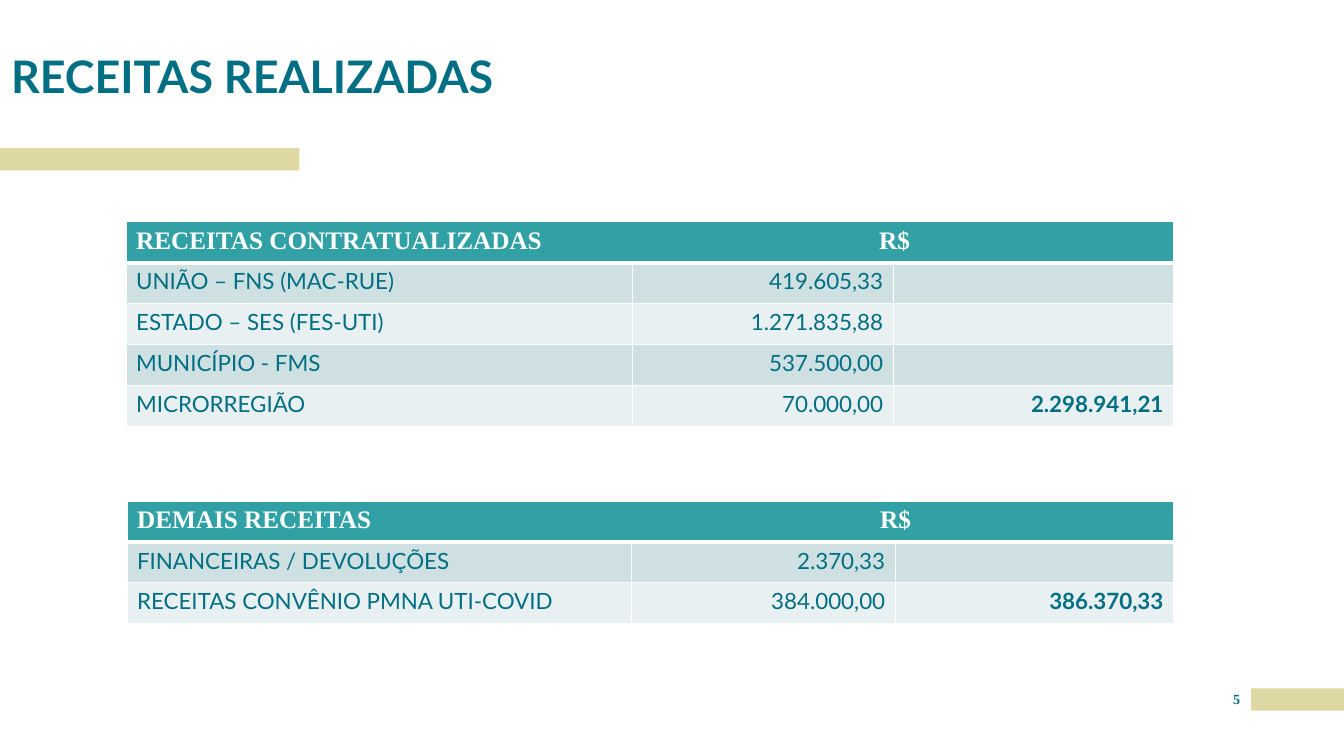
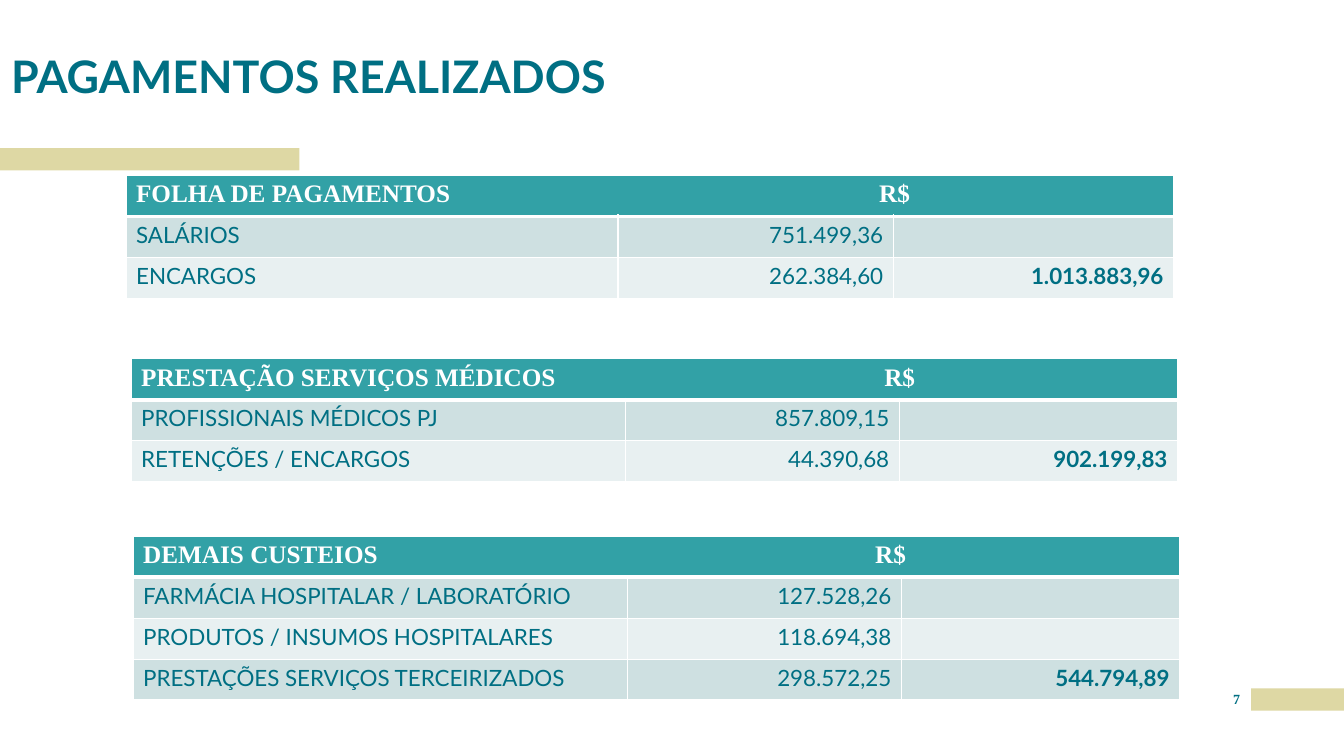
from dataclasses import dataclass

from lxml import etree
from pptx import Presentation
from pptx import util as u
from pptx.dml.color import RGBColor
from pptx.enum import shapes, text
from pptx.oxml.ns import qn

# Shared look
TEAL, HEADER, SAND, WHITE = "006F83", "32A1A6", "DED8A4", "FFFFFF"
STRIPES = ("CEE0E1", "E8F0F1")
SANS, SERIF = "Lato", "Times New Roman"
LEFT, RIGHT, CENTER = text.PP_ALIGN.LEFT, text.PP_ALIGN.RIGHT, text.PP_ALIGN.CENTER
ROW_H = u.Inches(1.22) // 3


@dataclass(frozen=True)
class Box:
    left: float
    top: float
    width: float
    height: float

    def emu(self) -> tuple:
        return tuple(u.Inches(v) for v in (self.left, self.top, self.width, self.height))


@dataclass(frozen=True)
class Style:
    size: float
    font: str
    color: str = TEAL
    bold: bool = True


@dataclass(frozen=True)
class MoneyTable:
    heading: str
    left: float
    top: float
    columns: tuple
    entries: tuple
    total: str
    currency_tab: float = 7.37


@dataclass(frozen=True)
class Page:
    title: str
    number: str
    tables: tuple


BANDS = (Box(12.41, 6.83, 0.92, 0.22), Box(0, 1.47, 2.97, 0.22))
TITLE_BOX = Box(0.11, 0, 9.34, 1.02)
NUMBER_BOX = Box(12.12, 6.85, 0.29, 0.25)
TITLE = Style(32, SANS)
NUMBER = Style(10, SERIF)
HEADING = Style(18, SERIF, WHITE)
BODY = Style(16, SANS, bold=False)
TOTAL = Style(16, SANS)

# Content
PAGES = (
    Page("RECEITAS REALIZADAS", "5", (
        MoneyTable("RECEITAS CONTRATUALIZADAS", 1.25, 2.2, (5.02, 2.59, 2.78), (
            ("UNIÃO – FNS (MAC-RUE)", "419.605,33"),
            ("ESTADO – SES (FES-UTI)", "1.271.835,88"),
            ("MUNICÍPIO - FMS", "537.500,00"),
            ("MICRORREGIÃO", "70.000,00"),
        ), "2.298.941,21"),
        MoneyTable("DEMAIS RECEITAS", 1.26, 4.97, (5, 2.62, 2.76), (
            ("FINANCEIRAS / DEVOLUÇÕES", "2.370,33"),
            ("RECEITAS CONVÊNIO PMNA UTI-COVID", "384.000,00"),
        ), "386.370,33"),
    )),
    Page("PAGAMENTOS REALIZADOS", "7", (
        MoneyTable("FOLHA DE PAGAMENTOS", 1.25, 1.74, (4.88, 2.73, 2.78), (
            ("SALÁRIOS", "751.499,36"),
            ("ENCARGOS", "262.384,60"),
        ), "1.013.883,96"),
        MoneyTable("PRESTAÇÃO SERVIÇOS MÉDICOS", 1.3, 3.56, (4.9, 2.72, 2.76), (
            ("PROFISSIONAIS MÉDICOS PJ", "857.809,15"),
            ("RETENÇÕES / ENCARGOS", "44.390,68"),
        ), "902.199,83"),
        MoneyTable("DEMAIS CUSTEIOS", 1.32, 5.32, (4.9, 2.72, 2.76), (
            ("FARMÁCIA HOSPITALAR / LABORATÓRIO", "127.528,26"),
            ("PRODUTOS / INSUMOS HOSPITALARES", "118.694,38"),
            ("PRESTAÇÕES SERVIÇOS TERCEIRIZADOS", "298.572,25"),
        ), "544.794,89", currency_tab=7.26),
    )),
)


def rgb(color: str) -> RGBColor:
    return RGBColor.from_string(color)


def fill_with(target, color: str) -> None:
    target.fill.solid()
    target.fill.fore_color.rgb = rgb(color)


def write(p, content: str, style: Style, align=LEFT) -> None:
    p.alignment = align
    r = p.add_run()
    r.text = content
    r.font.size, r.font.name, r.font.bold = u.Pt(style.size), style.font, style.bold
    r.font.color.rgb = rgb(style.color)


def add_band(s, box: Box) -> None:
    sp = s.shapes.add_shape(shapes.MSO_SHAPE.RECTANGLE, *box.emu())
    sp.shadow.inherit = False
    fill_with(sp, SAND)
    sp.line.fill.background()


def add_label(s, box: Box, content: str, style: Style, align=LEFT,
              anchor=text.MSO_ANCHOR.TOP, spacing: float = 1.0) -> None:
    tf = s.shapes.add_textbox(*box.emu()).text_frame
    tf.word_wrap = True
    tf.vertical_anchor = anchor
    tf.margin_left = tf.margin_top = tf.margin_right = tf.margin_bottom = 0
    p = tf.paragraphs[0]
    p.line_spacing = spacing
    write(p, content, style, align)


def set_borders(cell, top: float, bottom: float) -> None:
    props = cell._tc.get_or_add_tcPr()
    for side, width in (("L", 1), ("R", 1), ("T", top), ("B", bottom)):
        ln = etree.SubElement(props, qn(f"a:ln{side}"), w=str(u.Pt(width)))
        paint = etree.SubElement(ln, qn("a:solidFill"))
        etree.SubElement(paint, qn("a:srgbClr"), val=WHITE)


def set_tab(p, position: float) -> None:
    stops = etree.SubElement(p._p.get_or_add_pPr(), qn("a:tabLst"))
    etree.SubElement(stops, qn("a:tab"), pos=str(u.Inches(position)), algn="l")


def add_money_table(s, data: MoneyTable) -> None:
    count = len(data.entries) + 1
    frame = s.shapes.add_table(count, len(data.columns), u.Inches(data.left),
                               u.Inches(data.top), u.Inches(sum(data.columns)), ROW_H * count)
    table = frame.table
    for column, width in zip(table.columns, data.columns):
        column.width = u.Inches(width)

    # Fills and rules: a thick one under the heading
    for i, row in enumerate(table.rows):
        row.height = ROW_H
        for cell in row.cells:
            set_borders(cell, 3 if i == 1 else 1, 3 if i == 0 else 1)
            fill_with(cell, STRIPES[(i - 1) % 2] if i else HEADER)

    # Heading across all columns
    head = table.cell(0, 0)
    head.merge(table.cell(0, len(data.columns) - 1))
    p = head.text_frame.paragraphs[0]
    set_tab(p, data.currency_tab)
    write(p, f"{data.heading}\tR$", HEADING)

    # Entries, with the total on the last line
    for i, (name, amount) in enumerate(data.entries, start=1):
        write(table.cell(i, 0).text_frame.paragraphs[0], name, BODY)
        write(table.cell(i, 1).text_frame.paragraphs[0], amount, BODY, RIGHT)
    write(table.cell(count - 1, 2).text_frame.paragraphs[0], data.total, TOTAL, RIGHT)


def add_page(prs, page: Page) -> None:
    s = prs.slides.add_slide(prs.slide_layouts[6])
    for band in BANDS:
        add_band(s, band)
    add_label(s, TITLE_BOX, page.title, TITLE, anchor=text.MSO_ANCHOR.BOTTOM, spacing=0.9)
    add_label(s, NUMBER_BOX, page.number, NUMBER, CENTER)
    for data in page.tables:
        add_money_table(s, data)


def main() -> None:
    prs = Presentation()
    prs.slide_width, prs.slide_height = u.Inches(13.33), u.Inches(7.5)
    for page in PAGES:
        add_page(prs, page)
    prs.save("out.pptx")


if __name__ == "__main__":
    main()
